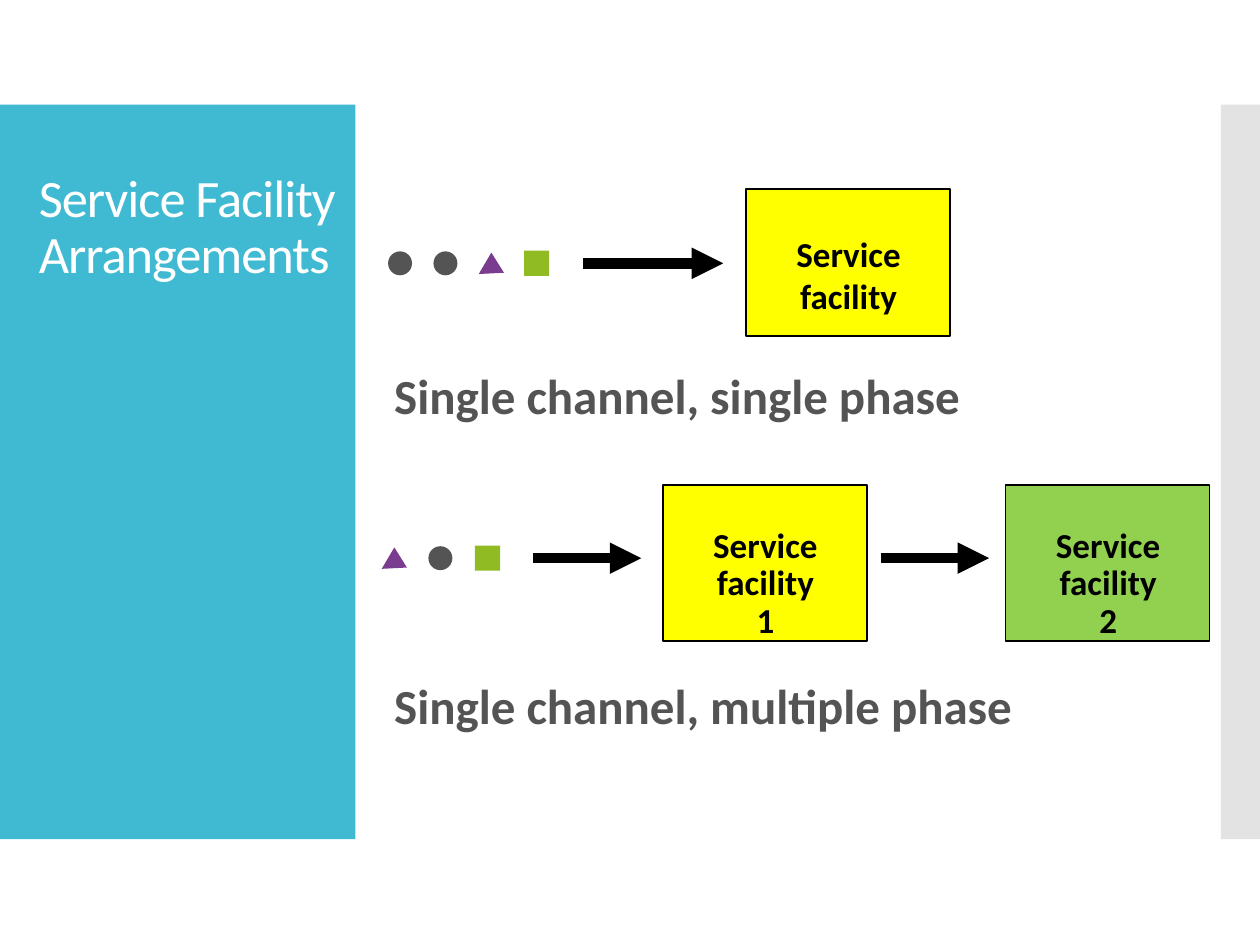
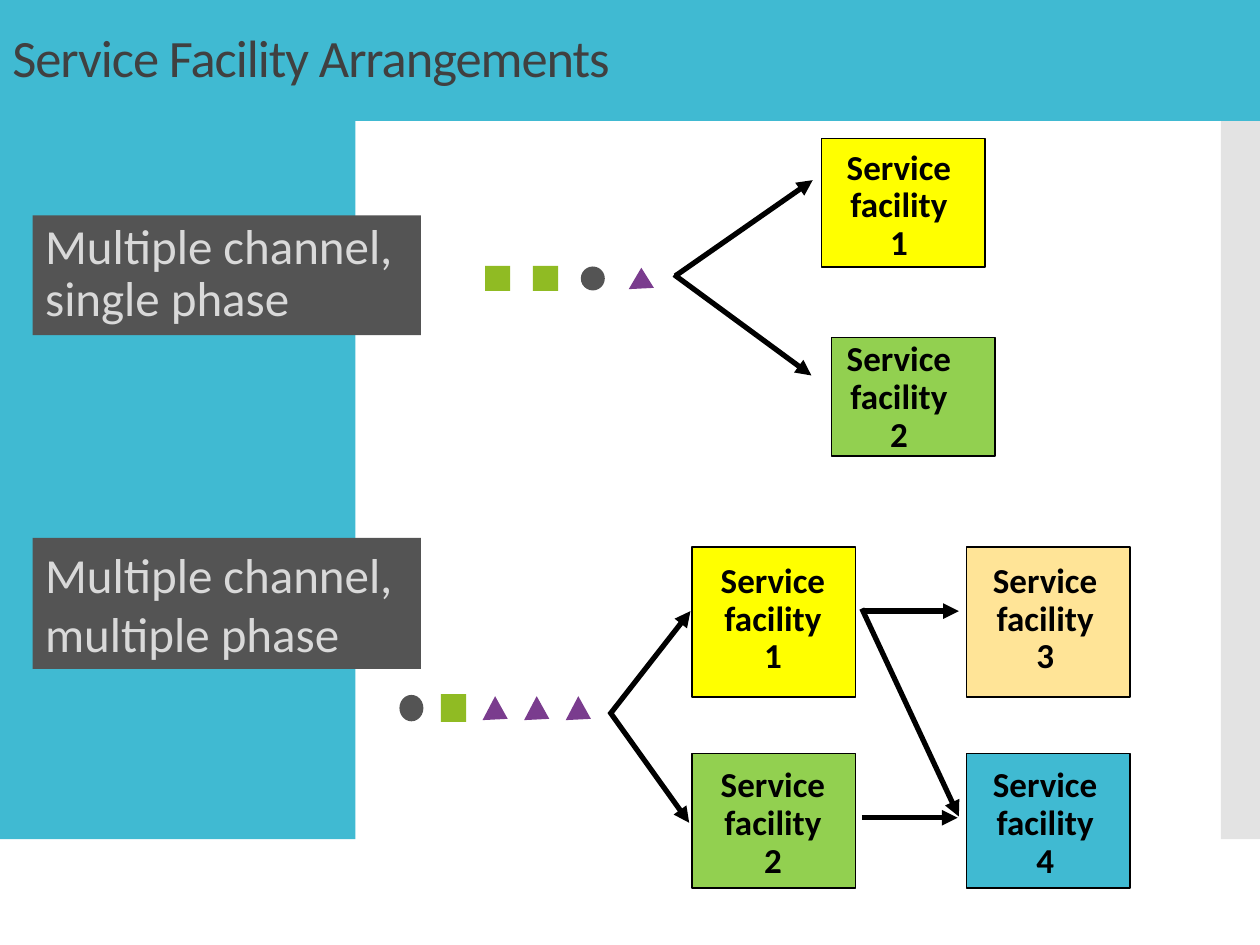
from dataclasses import dataclass

import pptx
import pptx.dml.color
import pptx.enum.shapes
import pptx.enum.text
import pptx.oxml.ns
import pptx.shapes.autoshape
import pptx.shapes.base
import pptx.shapes.shapetree
import pptx.slide
import pptx.util
from lxml import etree

Inches = pptx.util.Inches
Shapes = pptx.shapes.shapetree._BaseGroupShapes
Preset = pptx.enum.shapes.MSO_SHAPE
Align = pptx.enum.text.PP_ALIGN
Anchor = pptx.enum.text.MSO_ANCHOR


@dataclass(frozen=True)
class Theme:
    font: str = "Calibri"
    teal: str = "40BAD2"
    edge: str = "C8C8C8"
    white: str = "FFFFFF"
    black: str = "000000"
    slate: str = "545454"
    purple: str = "7A3C8E"
    olive: str = "90BB23"
    yellow: str = "FFFF00"
    green: str = "92D050"
    sand: str = "FFE497"
    dark_title: str = "404040"
    band_text: str = "D9D9D9"
    title_size: int = 30
    caption_size: int = 28
    facility_size: int = 20
    heavy_arrow: int = 6
    light_arrow: int = 3


THEME = Theme()


@dataclass(frozen=True)
class Box:
    left: float
    top: float
    width: float
    height: float

    def lengths(self) -> list[int]:
        return [Inches(n) for n in (self.left, self.top, self.width, self.height)]


@dataclass(frozen=True)
class TextStyle:
    size: int
    color: str
    bold: bool = False
    line_spacing: float = 1.0
    tracking: int = 0
    align: Align = Align.LEFT
    anchor: Anchor = Anchor.TOP
    wrap: bool = True


@dataclass(frozen=True)
class Queue:
    kinds: str
    left: float
    middle: float
    pitch: float
    stretch: float = 0.0


@dataclass(frozen=True)
class Facility:
    box: Box
    fill: str
    label: str
    label_dx: float
    label_dy: float
    line_spacing: float = 0.9


@dataclass(frozen=True)
class Arrow:
    start: tuple[float, float]
    end: tuple[float, float]
    weight: int = THEME.light_arrow


@dataclass(frozen=True)
class Arrangement:
    queue: Queue
    facilities: list[Facility]
    arrows: list[Arrow]


def rgb(color: str) -> pptx.dml.color.RGBColor:
    return pptx.dml.color.RGBColor.from_string(color)


def paint(shape: pptx.shapes.autoshape.Shape, fill: str, outline: str = "") -> None:
    shape.shadow.inherit = False
    shape.fill.solid()
    shape.fill.fore_color.rgb = rgb(fill)
    if outline:
        shape.line.color.rgb = rgb(outline)
        shape.line.width = pptx.util.Pt(1)
    else:
        shape.line.fill.background()


def draw_shape(shapes: Shapes, preset: Preset, box: Box, fill: str,
               outline: str = "") -> pptx.shapes.autoshape.Shape:
    shape = shapes.add_shape(preset, *box.lengths())
    paint(shape, fill, outline)
    return shape


def write(shape: pptx.shapes.autoshape.Shape, lines: list[str], style: TextStyle) -> None:
    frame = shape.text_frame
    frame.word_wrap = style.wrap
    frame.vertical_anchor = style.anchor
    for index, line in enumerate(lines):
        paragraph = frame.add_paragraph() if index else frame.paragraphs[0]
        paragraph.alignment = style.align
        paragraph.line_spacing = style.line_spacing
        run = paragraph.add_run()
        run.text = line
        run.font.name = THEME.font
        run.font.size = pptx.util.Pt(style.size)
        run.font.bold = style.bold
        run.font.color.rgb = rgb(style.color)
        if style.tracking:
            run.font._element.set("spc", str(style.tracking))


def draw_token(shapes: Shapes, kind: str, left: float, queue: Queue) -> None:
    if kind == "triangle":
        width, height = 0.2, 0.17 + queue.stretch
        top = queue.middle - height / 2
        base = top + height
        outline = shapes.build_freeform(Inches(left), Inches(base))
        corners = [(left + width / 2, top), (left + width, base - 0.01)]
        outline.add_line_segments([(Inches(x), Inches(y)) for x, y in corners])
        paint(outline.convert_to_shape(), THEME.purple)
        return
    preset, width, fill = {
        "circle": (Preset.OVAL, 0.19, THEME.slate),
        "square": (Preset.RECTANGLE, 0.2, THEME.olive),
    }[kind]
    height = width + queue.stretch
    draw_shape(shapes, preset, Box(left, queue.middle - height / 2, width, height), fill)


def draw_facility(shapes: Shapes, facility: Facility) -> None:
    box = facility.box
    draw_shape(shapes, Preset.RECTANGLE, box, facility.fill, THEME.black)
    label_box = Box(box.left + facility.label_dx, box.top + facility.label_dy, 1.15, 0.6)
    label = shapes.add_textbox(*label_box.lengths())
    write(label, [facility.label], TextStyle(
        THEME.facility_size, THEME.black, bold=True,
        line_spacing=facility.line_spacing, align=Align.CENTER))


def draw_arrow(shapes: Shapes, arrow: Arrow) -> None:
    ends = [Inches(n) for n in (*arrow.start, *arrow.end)]
    connector = shapes.add_connector(pptx.enum.shapes.MSO_CONNECTOR.STRAIGHT, *ends)
    connector.line.color.rgb = rgb(THEME.black)
    connector.line.width = pptx.util.Pt(arrow.weight)
    qn = pptx.oxml.ns.qn
    etree.SubElement(connector.line._get_or_add_ln(), qn("a:tailEnd"), type="triangle")
    etree.SubElement(connector._element.spPr, qn("a:effectLst"))


def draw_arrangement(slide: pptx.slide.Slide, arrangement: Arrangement) -> None:
    shapes = slide.shapes.add_group_shape().shapes
    queue = arrangement.queue
    for place, kind in enumerate(queue.kinds.split()):
        draw_token(shapes, kind, queue.left + place * queue.pitch, queue)
    for arrow in arrangement.arrows:
        draw_arrow(shapes, arrow)
    for facility in arrangement.facilities:
        draw_facility(shapes, facility)


def draw_title(slide: pptx.slide.Slide, box: Box, color: str, fill: str = "") -> None:
    title = slide.shapes.add_textbox(*box.lengths())
    if fill:
        title.fill.solid()
        title.fill.fore_color.rgb = rgb(fill)
    write(title, ["Service Facility Arrangements"], TextStyle(
        THEME.title_size, color, line_spacing=0.9, tracking=-60, anchor=Anchor.MIDDLE))


def add_banded_slide(deck: pptx.presentation.Presentation) -> pptx.slide.Slide:
    slide = deck.slides.add_slide(deck.slide_layouts[6])
    draw_shape(slide.shapes, Preset.RECTANGLE, Box(0, 0.83, 2.82, 5.83), THEME.teal)
    edge = draw_shape(slide.shapes, Preset.RECTANGLE, Box(9.69, 0.83, 0.31, 5.83), THEME.edge)
    qn = pptx.oxml.ns.qn
    edge_color = edge._element.spPr.find(qn("a:solidFill")).find(qn("a:srgbClr"))
    etree.SubElement(edge_color, qn("a:alpha"), val="50000")
    return slide


def build_single_channel(deck: pptx.presentation.Presentation) -> None:
    slide = add_banded_slide(deck)
    draw_title(slide, Box(0.21, 1.23, 2.65, 1.17), THEME.white)
    draw_arrangement(slide, Arrangement(
        Queue("circle circle triangle square", 3.08, 2.09, 0.36),
        [Facility(Box(5.92, 1.5, 1.62, 1.17), THEME.yellow, "Service facility",
                  0.24, 0.3, line_spacing=1.0)],
        [Arrow((4.63, 2.09), (5.74, 2.09), THEME.heavy_arrow)]))
    draw_arrangement(slide, Arrangement(
        Queue("triangle circle square", 3.03, 4.43, 0.37),
        [Facility(Box(left, 3.85, 1.62, 1.24), fill, f"Service facility {number}", 0.24, 0.29)
         for number, (left, fill) in enumerate(
             [(5.26, THEME.yellow), (7.98, THEME.green)], start=1)],
        [Arrow((left, 4.43), (left + 0.86, 4.43), THEME.heavy_arrow)
         for left in (4.23, 6.99)]))
    caption_style = TextStyle(THEME.caption_size, THEME.slate, bold=True, wrap=False)
    for caption, top, width in [("Single channel, single phase", 2.85, 4.74),
                                ("Single channel, multiple phase", 5.31, 5.16)]:
        box = Box(3.03, top, width, 0.57)
        write(slide.shapes.add_textbox(*box.lengths()), [caption], caption_style)


def build_multiple_channel(deck: pptx.presentation.Presentation) -> None:
    slide = add_banded_slide(deck)
    for phase, top, height, spacing in [("multiple phase", 4.27, 1.04, 1.0),
                                        ("single phase", 1.71, 0.95, 0.9)]:
        band = draw_shape(slide.shapes, Preset.RECTANGLE,
                          Box(0.26, top, 3.08, height), THEME.slate)
        write(band, ["Multiple channel,", phase],
              TextStyle(THEME.caption_size, THEME.band_text, line_spacing=spacing))
    draw_title(slide, Box(0, 0, 10, 0.96), THEME.dark_title, THEME.teal)

    draw_arrangement(slide, Arrangement(
        Queue("square square circle triangle", 3.85, 2.21, 0.38),
        [Facility(Box(6.52, 1.1, 1.3, 1.02), THEME.yellow, "Service facility 1", 0.04, 0.04),
         Facility(Box(6.6, 2.68, 1.3, 0.94), THEME.green, "Service facility 2", -0.04, -0.02)],
        [Arrow((5.35, 2.18), (6.44, 2.98)), Arrow((5.36, 2.19), (6.45, 1.43))]))

    columns = [(5.49, 0.07, (THEME.yellow, THEME.green)),
               (7.67, 0.05, (THEME.sand, THEME.teal))]
    rows = [(4.34, 1.19, 0.08), (5.98, 1.07, 0.06)]
    facilities = [
        Facility(Box(left, top, 1.3, height), fills[row],
                 f"Service facility {column * len(rows) + row + 1}", dx, dy)
        for column, (left, dx, fills) in enumerate(columns)
        for row, (top, height, dy) in enumerate(rows)]
    draw_arrangement(slide, Arrangement(
        Queue("circle square triangle triangle triangle", 3.17, 5.62, 0.33, stretch=0.02),
        facilities,
        [Arrow((4.84, 5.65), (5.47, 6.53)), Arrow((4.84, 5.67), (5.48, 4.85)),
         Arrow((6.85, 4.85), (7.61, 4.85)), Arrow((6.84, 4.83), (7.61, 6.48)),
         Arrow((6.84, 6.49), (7.6, 6.49))]))


def main() -> None:
    deck = pptx.Presentation()
    deck.slide_width, deck.slide_height = Inches(10), Inches(7.5)
    build_single_channel(deck)
    build_multiple_channel(deck)
    deck.save("out.pptx")


if __name__ == "__main__":
    main()
